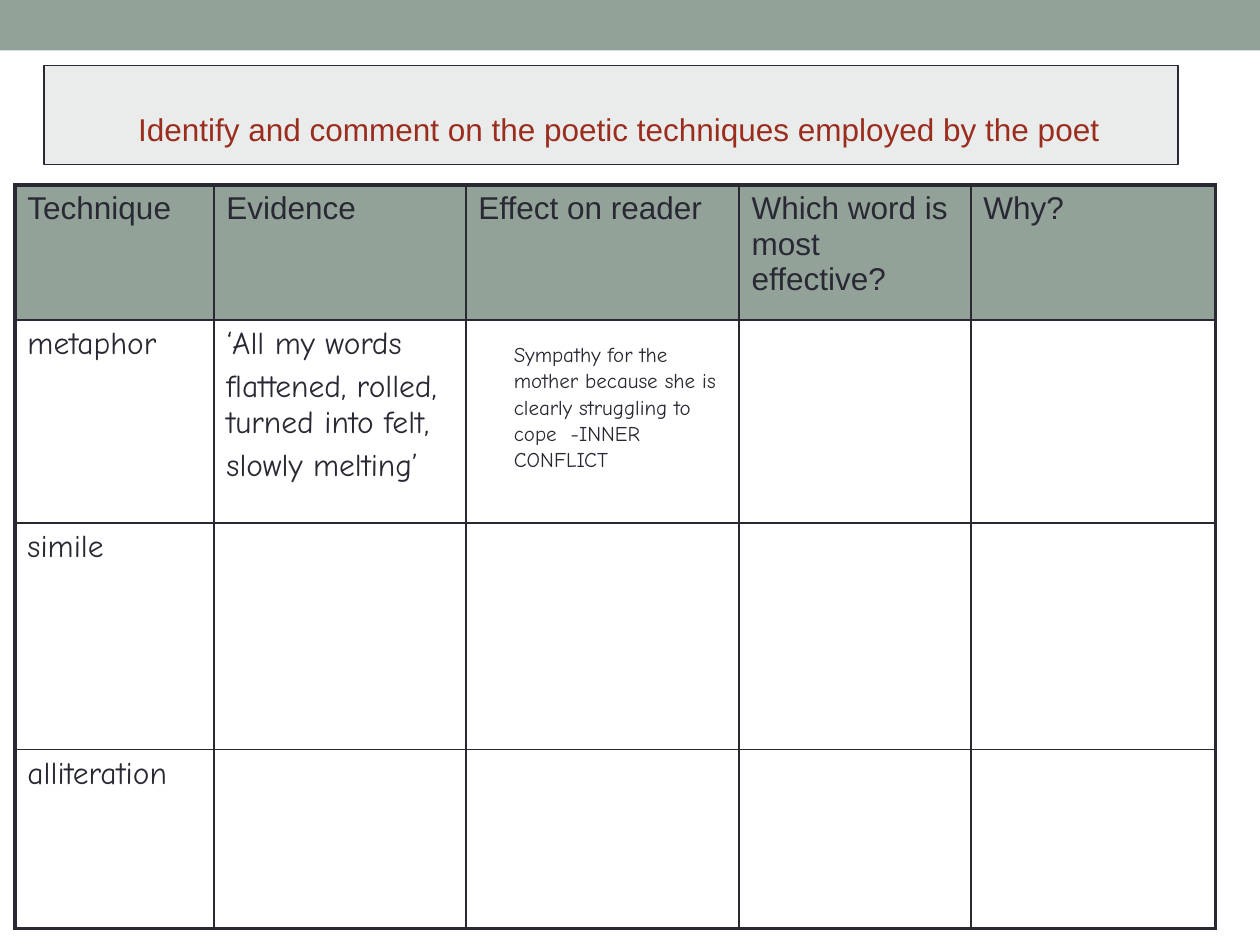
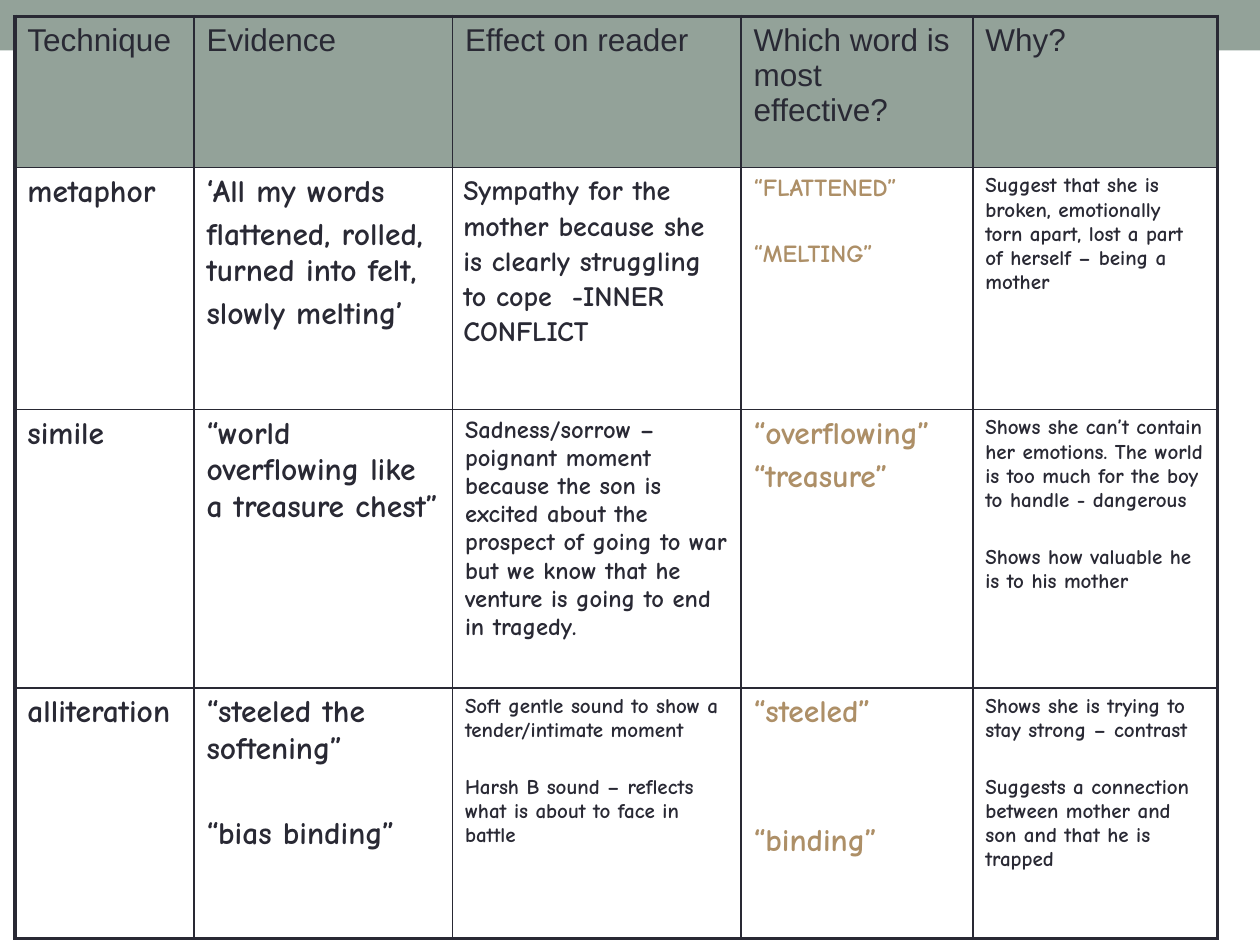
from collections import namedtuple
from lxml.etree import SubElement
from pptx import Presentation
from pptx.dml.color import RGBColor
from pptx.enum.shapes import MSO_SHAPE
from pptx.enum.text import MSO_ANCHOR, PP_ALIGN
from pptx.oxml.ns import qn
from pptx.util import Cm, Pt

SAGE = RGBColor(0x93, 0xA2, 0x99)
PALE = RGBColor(0xE9, 0xEC, 0xEB)
INK = RGBColor(0x29, 0x29, 0x34)
RUST = RGBColor(0x9B, 0x2D, 0x1F)
TAN = RGBColor(0xAD, 0x8F, 0x67)

HEADINGS = ["Technique", "Evidence", "Effect on reader", "Which word is most effective?", "Why?"]
METAPHOR_LINES = ["‘All my words", "flattened, rolled, turned into felt,", "slowly melting’"]
SYMPATHY = "Sympathy for the mother because she is clearly struggling to cope  -INNER CONFLICT"

Entry = namedtuple("Entry", "lines size color skipped", defaults=(18, INK, 0))
EMPTY = Entry([])


class PoetryDeck:
    heading_font = "Arial"
    body_font = "Comic Neue"
    thin, thick = Pt(1), Pt(2.25)

    def __init__(self):
        self.deck = Presentation()
        self.deck.slide_width, self.deck.slide_height = Cm(25.4), Cm(19.05)
        self.page = None

    def new_page(self):
        self.page = self.deck.slides.add_slide(self.deck.slide_layouts[6])
        self.rectangle(0, 0, 25.4, 1.02, SAGE)

    def rectangle(self, left, top, width, height, fill, line=None):
        box = self.page.shapes.add_shape(
            MSO_SHAPE.RECTANGLE, Cm(left), Cm(top), Cm(width), Cm(height))
        box.shadow.inherit = False
        box.fill.solid()
        box.fill.fore_color.rgb = fill
        if line is None:
            box.line.fill.background()
        else:
            box.line.color.rgb = line
            box.line.width = Pt(0.75)
        return box

    def add_span(self, para, text, font, size, color, bold=False):
        span = para.add_run()
        span.text = text
        span.font.name = font
        span.font.size = Pt(size)
        span.font.bold = bold
        span.font.color.rgb = color

    def title(self, text):
        box = self.rectangle(0.89, 1.32, 22.86, 2, PALE, INK)
        frame = box.text_frame
        frame.word_wrap = True
        frame.vertical_anchor = MSO_ANCHOR.BOTTOM
        frame.margin_left, frame.margin_bottom = Cm(0.56), Cm(0.34)
        para = frame.paragraphs[0]
        para.alignment = PP_ALIGN.CENTER
        para.line_spacing = 0.8
        self.add_span(para, text, self.heading_font, 18, RUST)

    def note(self, left, top, width, height, text, size, bold=False):
        box = self.page.shapes.add_textbox(Cm(left), Cm(top), Cm(width), Cm(height))
        box.text_frame.word_wrap = True
        para = box.text_frame.paragraphs[0]
        para.line_spacing = 1.05
        self.add_span(para, text, self.body_font, size, INK, bold)

    def border(self, cell, side, width):
        properties = cell._tc.get_or_add_tcPr()
        line = SubElement(properties, qn(f"a:ln{side}"), w=str(int(width)))
        fill = SubElement(line, qn("a:solidFill"))
        SubElement(fill, qn("a:srgbClr"), val=str(INK))

    def fill_cell(self, cell, entry, font, bold):
        frame = cell.text_frame
        for index, text in enumerate(entry.lines):
            para = frame.add_paragraph() if index else frame.paragraphs[0]
            if index:
                para.space_before = Pt(round(entry.size * (0.2 + 1.36 * entry.skipped), 1))
            self.add_span(para, text, font, entry.size, entry.color, bold)

    def grid(self, top, widths, heights, body, bold=False):
        rows = [[Entry([heading]) for heading in HEADINGS]] + body
        frame = self.page.shapes.add_table(
            len(heights), len(widths), Cm(0.3), Cm(top), Cm(sum(widths)), Cm(sum(heights)))
        table = frame.table
        table.first_row = table.horz_banding = False
        for column, width in zip(table.columns, widths):
            column.width = Cm(width)
        for row, height in zip(table.rows, heights):
            row.height = Cm(height)
        for y, entries in enumerate(rows):
            for x, entry in enumerate(entries):
                cell = table.cell(y, x)
                edges = {"L": x == 0, "R": x == len(widths) - 1,
                         "T": y == 0, "B": y == len(heights) - 1}
                for side, outer in edges.items():
                    self.border(cell, side, self.thick if outer else self.thin)
                if y == 0:
                    cell.fill.solid()
                    cell.fill.fore_color.rgb = SAGE
                    self.fill_cell(cell, entry, self.heading_font, False)
                else:
                    cell.fill.background()
                    self.fill_cell(cell, entry, self.body_font, bold)


def add_task(poetry):
    poetry.new_page()
    poetry.title("Identify and comment on the poetic techniques employed by the poet")
    poetry.grid(3.73, [4.01, 5.08, 5.51, 4.67, 4.93], [2.72, 4.09, 4.57, 3.61], [
        [Entry(["metaphor"]), Entry(METAPHOR_LINES)] + [EMPTY] * 3,
        [Entry(["simile"])] + [EMPTY] * 4,
        [Entry(["alliteration"])] + [EMPTY] * 4,
    ])
    poetry.note(10.11, 6.73, 4.8, 2.82, SYMPATHY, 12)


def add_answers(poetry):
    poetry.new_page()
    poetry.grid(0.33, [3.61, 5.21, 5.82, 4.67, 4.93], [3.05, 4.88, 5.61, 5.05], [
        [
            Entry(["metaphor"]),
            Entry(METAPHOR_LINES),
            EMPTY,
            Entry(["“FLATTENED”", "“MELTING”"], 14, TAN, 1),
            Entry(["Suggest that she is broken, emotionally torn apart, "
                   "lost a part of herself – being a mother"], 12),
        ],
        [
            Entry(["simile"]),
            Entry(["“world overflowing like a treasure chest”"]),
            Entry(["Sadness/sorrow – poignant moment because the son is excited about "
                   "the prospect of going to war but we know that he venture is going "
                   "to end in tragedy."], 14),
            Entry(["“overflowing”", "“treasure”"], 18, TAN),
            Entry(["Shows she can’t contain her emotions. The world is too much "
                   "for the boy to handle - dangerous",
                   "Shows how valuable he is to his mother"], 12, INK, 1),
        ],
        [
            Entry(["alliteration"]),
            Entry(["“steeled the softening”", "“bias binding”"], 18, INK, 1),
            Entry(["Soft gentle sound to show a tender/intimate moment",
                   "Harsh B sound – reflects what is about to face in battle"], 12, INK, 1),
            Entry(["“steeled”", "“binding”"], 18, TAN, 2),
            Entry(["Shows she is trying to stay strong – contrast",
                   "Suggests a connection between mother and son and that he is trapped"],
                  12, INK, 1),
        ],
    ], bold=True)
    poetry.note(9.09, 3.33, 5.59, 4.37, SYMPATHY, 16, bold=True)


def main():
    poetry = PoetryDeck()
    add_task(poetry)
    add_answers(poetry)
    poetry.deck.save("out.pptx")


if __name__ == "__main__":
    main()
